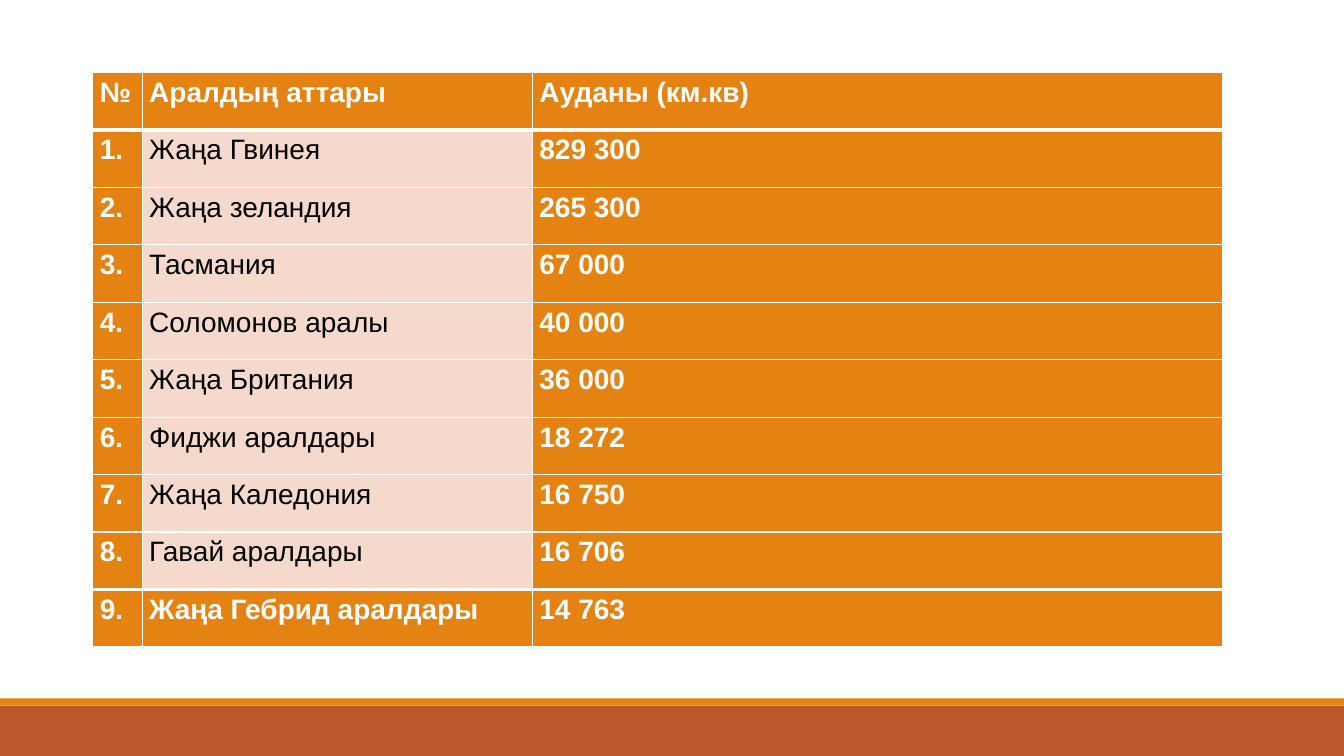
from lxml.etree import SubElement
from pptx import Presentation
from pptx.dml.color import RGBColor
from pptx.enum.shapes import MSO_SHAPE
from pptx.oxml.ns import qn
from pptx.util import Inches, Pt

ORANGE, RUST, BLUSH = "E48312", "BD582C", "F5D9CC"
WHITE, BLACK = "FFFFFF", "000000"

HEADINGS = ("№", "Аралдың аттары", "Ауданы (км.кв)")
ISLANDS = (
    ("Жаңа Гвинея", "829 300"),
    ("Жаңа зеландия", "265 300"),
    ("Тасмания", "67 000"),
    ("Соломонов аралы", "40 000"),
    ("Жаңа Британия", "36 000"),
    ("Фиджи аралдары", "18 272"),
    ("Жаңа Каледония", "16 750"),
    ("Гавай аралдары", "16 706"),
    ("Жаңа Гебрид аралдары", "14 763"),
)


def color(code):
    return RGBColor.from_string(code)


class IslandSlide:
    font = "Arial"
    size = Pt(20)
    leading = Pt(12.8)
    inset = Inches(0.07)
    thin, thick = Pt(1), Pt(3)

    def __init__(self, deck):
        self.width, self.height = deck.slide_width, deck.slide_height
        self.slide = deck.slides.add_slide(deck.slide_layouts[6])

    def band(self, top, height, fill):
        band = self.slide.shapes.add_shape(
            MSO_SHAPE.RECTANGLE, 0, round(self.height * top),
            self.width, round(self.height * height))
        band.shadow.inherit = False
        band.fill.solid()
        band.fill.fore_color.rgb = color(fill)
        band.line.fill.background()

    def border(self, cell, side, weight):
        edge = SubElement(cell._tc.get_or_add_tcPr(), qn(f"a:ln{side}"), w=str(weight))
        paint = SubElement(edge, qn("a:solidFill"))
        SubElement(paint, qn("a:srgbClr"), val=WHITE)

    def cell(self, cell, text, strong, top, bottom):
        cell.margin_left, cell.margin_top = self.inset, self.leading
        cell.margin_right = cell.margin_bottom = 0
        for side, weight in (("L", self.thin), ("R", self.thin), ("T", top), ("B", bottom)):
            self.border(cell, side, weight)
        cell.fill.solid()
        cell.fill.fore_color.rgb = color(ORANGE if strong else BLUSH)
        paragraph = cell.text_frame.paragraphs[0]
        paragraph.line_spacing = self.leading
        run = paragraph.add_run()
        run.text = text
        run.font.name, run.font.size, run.font.bold = self.font, self.size, strong
        run.font.color.rgb = color(WHITE if strong else BLACK)

    def table(self, left, top, columns, row_height, records):
        height = round(self.height * row_height)
        widths = [round(self.width * share) for share in columns]
        table = self.slide.shapes.add_table(
            len(records), len(columns), round(self.width * left),
            round(self.height * top), sum(widths), height * len(records)).table
        table.horz_banding = False
        for column, width in zip(table.columns, widths):
            column.width = width
        last = len(records) - 1
        for index, record in enumerate(records):
            table.rows[index].height = height
            above = self.thick if index in (1, last) else self.thin
            below = self.thick if index in (0, last - 1) else self.thin
            for position, text in enumerate(record):
                strong = position != 1 or index in (0, last)
                self.cell(table.cell(index, position), text, strong, above, below)


def main():
    deck = Presentation()
    deck.slide_width, deck.slide_height = Inches(13.33), Inches(7.5)
    page = IslandSlide(deck)
    page.band(7 / 7.5, 0.5 / 7.5, RUST)
    page.band(6.93 / 7.5, 0.07 / 7.5, ORANGE)
    numbered = [(f"{number}.", *island) for number, island in enumerate(ISLANDS, 1)]
    columns = [width / 13.33 for width in (0.49, 3.87, 6.85)]
    page.table(0.92 / 13.33, 0.72 / 7.5, columns, 0.57 / 7.5, [HEADINGS, *numbered])
    deck.save("out.pptx")


if __name__ == "__main__":
    main()
